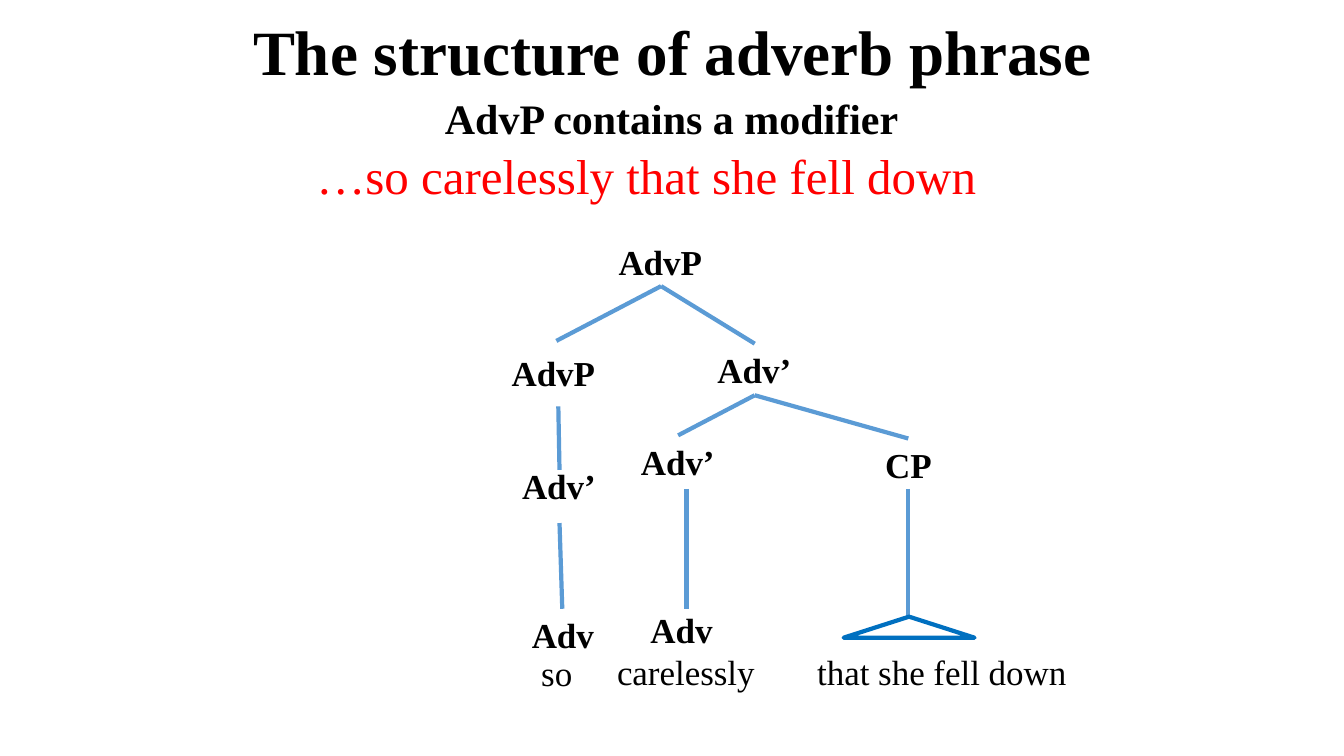
from lxml import etree
from pptx import Presentation
from pptx.dml.color import RGBColor
from pptx.enum.shapes import MSO_CONNECTOR, MSO_SHAPE
from pptx.enum.text import MSO_ANCHOR, PP_ALIGN
from pptx.oxml.ns import qn
from pptx.util import Cm, Pt

STRAIGHT = MSO_CONNECTOR.STRAIGHT
RECTANGLE = MSO_SHAPE.RECTANGLE
TRIANGLE = MSO_SHAPE.ISOSCELES_TRIANGLE
TOP, MIDDLE = MSO_ANCHOR.TOP, MSO_ANCHOR.MIDDLE
CENTER = PP_ALIGN.CENTER

BLACK = RGBColor(0x00, 0x00, 0x00)
WHITE = RGBColor(0xFF, 0xFF, 0xFF)
RED = RGBColor(0xFF, 0x00, 0x00)
BRANCH_BLUE = RGBColor(0x5B, 0x9B, 0xD5)
TRIANGLE_BLUE = RGBColor(0x00, 0x70, 0xC0)

FONT = "Times New Roman"
LINE_WIDTH = Pt(3)
NODE_SIZE = 25
ROW = 1.3  # height of a one-line node, cm

# left, top, width, height in cm, then the lines as (text, bold)
NODES = [
    (15.19, 5.94, 2.9, ROW, [("AdvP", True)]),
    (12.62, 8.59, 2.82, 1.57, [("AdvP ", True)]),
    (17.7, 8.66, 2.62, ROW, [("Adv’", True)]),
    (21.79, 11.05, 2.21, ROW, [("CP", True)]),
    (15.72, 10.97, 2.72, ROW, [("Adv’", True)]),
    (12.7, 11.58, 2.77, ROW, [("Adv’", True)]),
    (12.8, 15.34, 2.77, ROW, [("Adv", True)]),
    (15.19, 15.34, 4.19, 2.11, [("Adv ", True), ("carelessly", False)]),
    (12.62, 16.23, 2.82, 1.45, [("so", False)]),
    (19.43, 16.13, 8.61, 1.57, [("that she fell down", False)]),
]

# parent point, then the points of its children, in cm
BRANCHES = [
    ((16.66, 7.21), [(14.02, 8.59), (19.02, 8.66)]),
    ((19.02, 9.96), [(17.09, 10.97), (22.89, 11.05)]),
    ((14.07, 10.24), [(14.1, 11.84)]),
    ((14.1, 13.18), [(14.17, 15.34)]),
    ((17.3, 12.32), [(17.3, 15.34)]),
    ((22.89, 12.32), [(22.89, 15.54)]),
]


def write_lines(s, lines, size, color=BLACK, anchor=MIDDLE, spacing=1.0):
    """Fill a shape with centred paragraphs given as (text, bold)."""
    tf = s.text_frame
    tf.word_wrap = True
    tf.vertical_anchor = anchor
    for i, (text, bold) in enumerate(lines):
        p = tf.add_paragraph() if i else tf.paragraphs[0]
        p.text = text
        p.alignment = CENTER
        p.line_spacing = spacing
        p.font.name = FONT
        p.font.size = Pt(size)
        p.font.bold = bold
        p.font.color.rgb = color


def add_text(slide, left, top, width, height, lines, size, **style):
    s = slide.shapes.add_textbox(Cm(left), Cm(top), Cm(width), Cm(height))
    write_lines(s, lines, size, **style)


def add_branch(slide, parent, child):
    s = slide.shapes.add_connector(STRAIGHT, *map(Cm, parent + child))
    s.line.color.rgb = BRANCH_BLUE
    s.line.width = LINE_WIDTH
    etree.SubElement(s._element.spPr, qn("a:effectLst"))


def add_example(slide, text):
    s = slide.shapes.add_shape(RECTANGLE, Cm(6.91), Cm(3.58), Cm(18.77), Cm(1.65))
    s.shadow.inherit = False
    s.fill.solid()
    s.fill.fore_color.rgb = WHITE
    s.line.fill.background()
    write_lines(s, [(text, False)], 35, color=RED)


def add_clause_triangle(slide):
    s = slide.shapes.add_shape(TRIANGLE, Cm(21.26), Cm(15.54), Cm(3.3), Cm(0.53))
    s.shadow.inherit = False
    s.fill.background()
    s.line.color.rgb = TRIANGLE_BLUE
    s.line.width = LINE_WIDTH


def main():
    prs = Presentation()
    prs.slide_width, prs.slide_height = Cm(33.87), Cm(19.05)
    slide = prs.slides.add_slide(prs.slide_layouts[6])

    add_text(slide, 2.34, 0.51, 29.21, 1.78,
             [("The structure of adverb phrase", True)], 45, spacing=0.9)
    add_text(slide, 1.22, 2.36, 31.42, 15.9,
             [("AdvP contains a modifier", True)], 30, anchor=TOP, spacing=0.9)
    add_example(slide, "…so carelessly that she fell down")

    for left, top, width, height, lines in NODES:
        add_text(slide, left, top, width, height, lines, NODE_SIZE)
    for parent, children in BRANCHES:
        for child in children:
            add_branch(slide, parent, child)
    add_clause_triangle(slide)

    prs.save("out.pptx")


if __name__ == "__main__":
    main()
